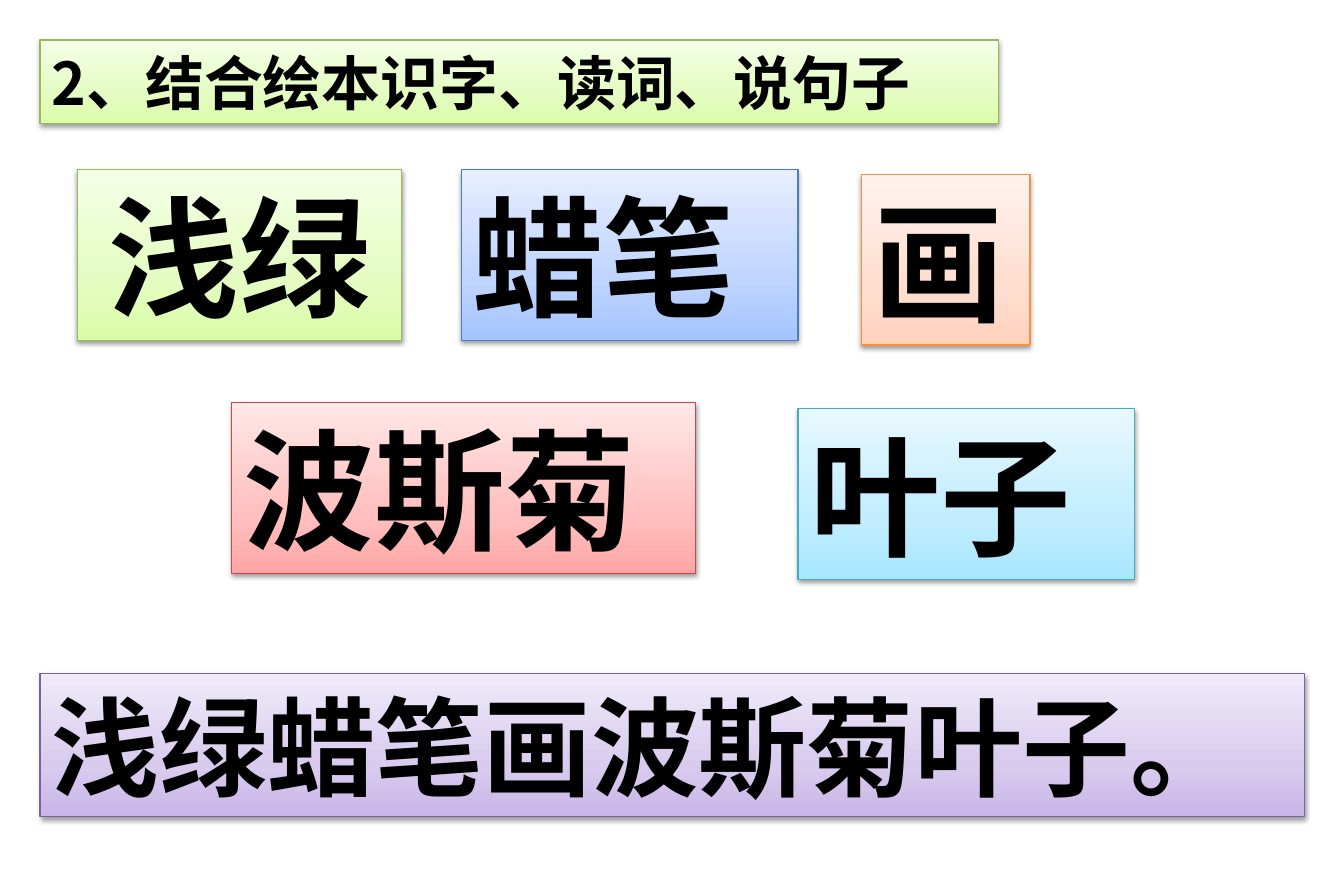
"""Builds a Chinese reading slide: a heading, five word cards and a sentence."""
import copy
import pptx
import pptx.util
import pptx.dml.color
import pptx.enum.shapes
import pptx.enum.text
import pptx.oxml
import pptx.oxml.ns
from pptx.util import Cm, Inches, Pt

ALIGN = pptx.enum.text.PP_ALIGN
THEME = {
    "font": "Noto Sans CJK SC",
    "text": "000000",
    "line_width": 0.75,
    "stops": (0, 0.35, 1),
    "sizes": {"heading": 36, "word": 80, "sentence": 66},
    "heights": {"heading": 0.71, "word": 1.45, "sentence": 1.21},
    "colors": {
        "green": ("98B955", "DAFDA7", "E4FCC2", "F5FFE7"),
        "blue": ("4B7EBC", "A4C4FF", "BFD4FF", "E6EEFF"),
        "orange": ("F69240", "FFD2BD", "FFDED0", "FFF2ED"),
        "red": ("BF4C48", "FFA6A5", "FFC0BF", "FFE7E7"),
        "aqua": ("46AAC5", "A7E6FF", "C1EDFF", "E7F8FF"),
        "purple": ("7D60A0", "C9B5E8", "D8CBEE", "F0EAF9"),
    },
}
CARDS = [
    ("2、结合绘本识字、读词、说句子", "heading", "green", 0.34, 0.34, 8.14, ALIGN.LEFT),
    ("浅绿", "word", "green", 0.66, 1.44, 2.75, ALIGN.CENTER),
    ("蜡笔", "word", "blue", 3.92, 1.44, 2.86, ALIGN.LEFT),
    ("画", "word", "orange", 7.32, 1.48, 1.43, ALIGN.LEFT),
    ("波斯菊", "word", "red", 1.97, 3.42, 3.94, ALIGN.LEFT),
    ("叶子", "word", "aqua", 6.78, 3.47, 2.86, ALIGN.LEFT),
    ("浅绿蜡笔画波斯菊叶子。", "sentence", "purple", 0.34, 5.72, 10.74, ALIGN.LEFT),
]
SHADOW = (
    '<a:outerShdw xmlns:a="http://schemas.openxmlformats.org/drawingml/2006/main" '
    'blurRad="40000" dist="20000" dir="5400000" rotWithShape="0">'
    '<a:srgbClr val="000000"><a:alpha val="38000"/></a:srgbClr></a:outerShdw>'
)


def rgb(value):
    """Return a colour from its hex text."""
    return pptx.dml.color.RGBColor.from_string(value)


def set_all(target, values):
    """Set every attribute named in values."""
    for name, value in values.items():
        setattr(target, name, value)


def paint(sp, line, *shades):
    """Give a card its outline, vertical gradient and soft shadow."""
    sp.line.color.rgb = rgb(line)
    sp.line.width = Pt(THEME["line_width"])
    sp.fill.gradient()
    sp.fill.gradient_angle = 90
    props = sp.element.spPr
    stop_list = props.find(".//" + pptx.oxml.ns.qn("a:gsLst"))
    stop_list.append(copy.deepcopy(stop_list[-1]))
    for stop, place, shade in zip(sp.fill.gradient_stops, THEME["stops"], shades):
        stop.position = place
        stop.color.rgb = rgb(shade)
    sp.shadow.inherit = False
    effects = props.find(pptx.oxml.ns.qn("a:effectLst"))
    effects.append(pptx.oxml.parse_xml(SHADOW))


def add_card(slide, text, role, color, left, top, width, align):
    """Add one filled card with its bold text."""
    box = map(Inches, (left, top, width, THEME["heights"][role]))
    sp = slide.shapes.add_shape(pptx.enum.shapes.MSO_SHAPE.RECTANGLE, *box)
    paint(sp, *THEME["colors"][color])
    tf = sp.text_frame
    set_all(tf, {"word_wrap": True, "vertical_anchor": pptx.enum.text.MSO_ANCHOR.MIDDLE})
    p = tf.paragraphs[0]
    p.alignment = align
    r = p.add_run()
    r.text = text
    r.font.color.rgb = rgb(THEME["text"])
    set_all(r.font, {"name": THEME["font"], "size": Pt(THEME["sizes"][role]), "bold": True})
    latin = r._r.find(".//" + pptx.oxml.ns.qn("a:latin"))
    east_asian = copy.deepcopy(latin)
    east_asian.tag = pptx.oxml.ns.qn("a:ea")
    latin.addnext(east_asian)


def main():
    """Build and save the slide."""
    prs = pptx.Presentation()
    prs.slide_width = Cm(29)
    prs.slide_height = Cm(19)
    slide = prs.slides.add_slide(prs.slide_layouts[6])
    for card in CARDS:
        add_card(slide, *card)
    prs.save("out.pptx")


if __name__ == "__main__":
    main()
